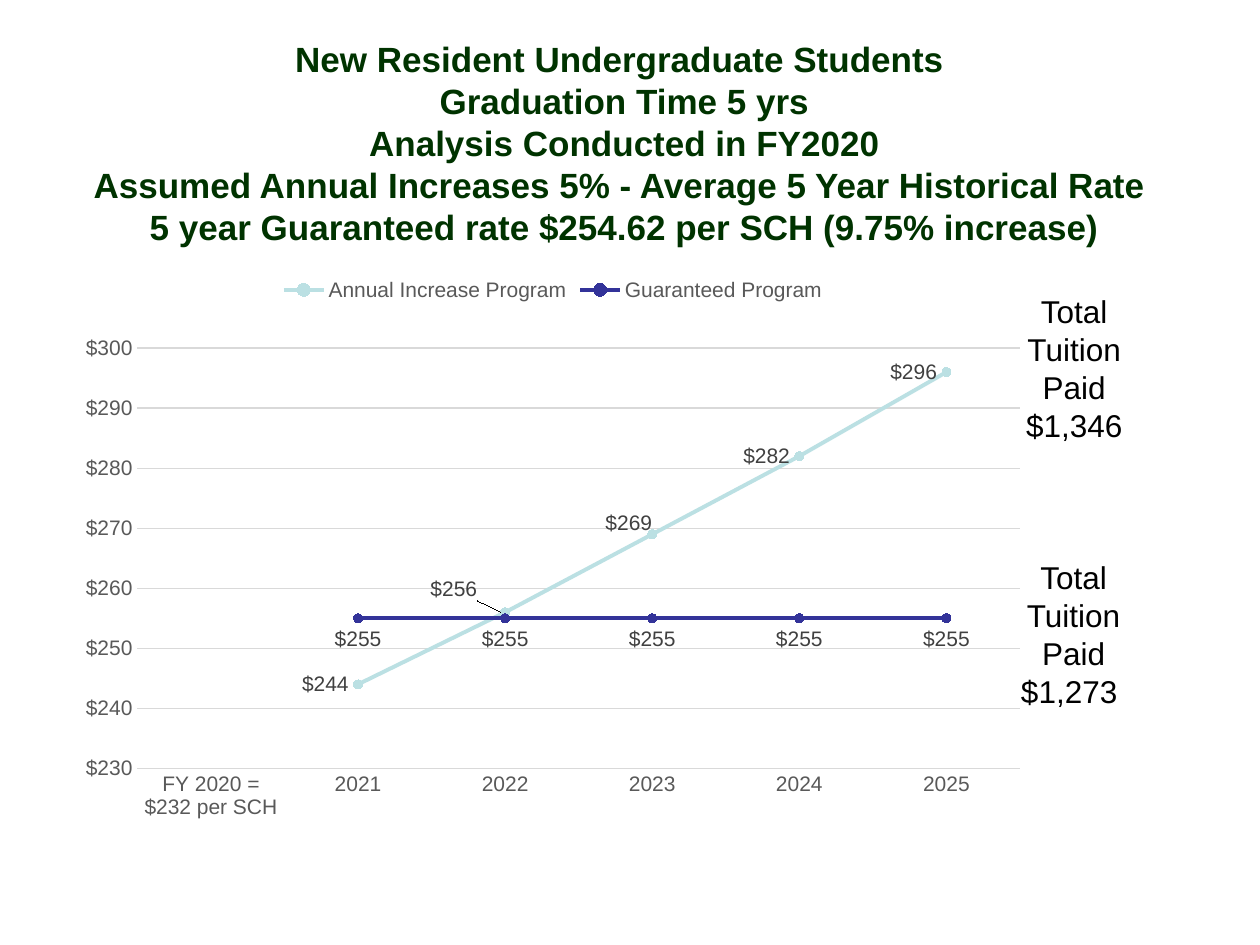
from lxml import etree
from pptx import Presentation
from pptx.chart.data import CategoryChartData
from pptx.dml.color import RGBColor
from pptx.enum.chart import (XL_CHART_TYPE, XL_LABEL_POSITION, XL_LEGEND_POSITION,
                             XL_MARKER_STYLE, XL_TICK_MARK)
from pptx.enum.text import MSO_ANCHOR, PP_ALIGN
from pptx.oxml.ns import qn
from pptx.util import Pt

LINE_CHART = XL_CHART_TYPE.LINE_MARKERS
LEFT, BELOW = XL_LABEL_POSITION.LEFT, XL_LABEL_POSITION.BELOW
LEGEND_TOP = XL_LEGEND_POSITION.TOP
CIRCLE = XL_MARKER_STYLE.CIRCLE
NO_TICK = XL_TICK_MARK.NONE
MIDDLE, TOP = MSO_ANCHOR.MIDDLE, MSO_ANCHOR.TOP
CENTER = PP_ALIGN.CENTER

FONT = "Arial"
DOLLARS = '"$"#,##0'
COLORS = {"title": "003300", "text": "000000", "axis": "595959", "label": "404040",
          "grid": "D9D9D9", "annual": "BBE0E3", "guaranteed": "333399"}

TITLE = "\v".join([
    "New Resident Undergraduate Students ",
    "Graduation Time 5 yrs",
    "Analysis Conducted in FY2020",
    "Assumed Annual Increases 5% - Average 5 Year Historical Rate ",
    "5 year Guaranteed rate $254.62 per SCH (9.75% increase)",
])
YEARS = ["FY 2020 = $232 per SCH", "2021", "2022", "2023", "2024", "2025"]
# name, values, colour, label position, moved labels {point: (dx, dy)}
SERIES = [
    ("Annual Increase Program", [None, 244, 256, 269, 282, 296], "annual", LEFT,
     {2: (-0.02, -0.04), 3: (0.01, -0.02)}),
    ("Guaranteed Program", [None] + [255] * 5, "guaranteed", BELOW, {}),
]
# total, left, top, width
TOTALS = [("$1,273 ", 563.75, 315.4, 99.4), ("$1,346", 572.4, 163.4, 82.8)]


def rgb(name):
    return RGBColor.from_string(COLORS[name])


def style_font(font, size, color, bold=False):
    font.name, font.size, font.bold = FONT, Pt(size), bold
    font.color.rgb = rgb(color)


def write_text(frame, paragraphs, size=18, color="text", bold=False, anchor=TOP):
    frame.word_wrap = True
    frame.vertical_anchor = anchor
    for index, text in enumerate(paragraphs):
        para = frame.paragraphs[0] if index == 0 else frame.add_paragraph()
        para.text = text
        para.alignment = CENTER
        for span in para.runs:
            style_font(span.font, size, color, bold)


def make_layout(**settings):
    layout = etree.Element(qn("c:layout"))
    manual = etree.SubElement(layout, qn("c:manualLayout"))
    for tag, value in settings.items():
        etree.SubElement(manual, qn("c:" + tag)).set("val", str(value))
    return layout


def style_line(line, color, width):
    line.color.rgb = rgb(color)
    line.width = Pt(width)


def style_axes(chart):
    for axis in (chart.category_axis, chart.value_axis):
        axis.major_tick_mark = axis.minor_tick_mark = NO_TICK
        style_font(axis.tick_labels.font, 12, "axis")
    style_line(chart.category_axis.format.line, "grid", 0.75)
    values = chart.value_axis
    values.minimum_scale, values.maximum_scale, values.major_unit = 230, 300, 10
    values.tick_labels.number_format = DOLLARS
    values.tick_labels.number_format_is_linked = False
    values.format.line.fill.background()
    style_line(values.major_gridlines.format.line, "grid", 0.75)


def style_series(series, color, position, moved):
    series.smooth = False
    style_line(series.format.line, color, 2.25)
    marker = series.marker
    marker.style, marker.size = CIRCLE, 5
    marker.format.fill.solid()
    marker.format.fill.fore_color.rgb = rgb(color)
    marker.format.line.color.rgb = rgb(color)

    labels = series.data_labels
    labels.show_value = True
    labels.position = position
    labels.number_format, labels.number_format_is_linked = DOLLARS, False
    style_font(labels.font, 12, "label")
    for index in moved:
        label = series.points[index].data_label
        label.position = position
        style_font(label.font, 12, "label")
    # Shift the moved labels
    for item in labels._element.findall(qn("c:dLbl")):
        number = item.find(qn("c:idx"))
        dx, dy = moved[int(number.get("val"))]
        number.addnext(make_layout(x=dx, y=dy))


def add_tuition_chart(page):
    data = CategoryChartData(number_format=DOLLARS)
    data.categories = YEARS
    for name, values, *_ in SERIES:
        data.add_series(name, values)
    chart = page.shapes.add_chart(LINE_CHART, Pt(49), Pt(151.2), Pt(534.2), Pt(326.9),
                                  data).chart
    chart.has_title = False
    style_font(chart.font, 10, "text")
    chart.has_legend = True
    chart.legend.position = LEGEND_TOP
    chart.legend.include_in_layout = False
    style_font(chart.legend.font, 12, "axis")
    style_axes(chart)
    plot = chart.plots[0]
    plot.vary_by_categories = False
    for series, (_, _, color, position, moved) in zip(plot.series, SERIES):
        style_series(series, color, position, moved)

    # Fixed plot area
    area = chart._chartSpace.find(".//" + qn("c:plotArea"))
    for old in area.findall(qn("c:layout")):
        area.remove(old)
    area.insert(0, make_layout(layoutTarget="inner", xMode="edge", yMode="edge",
                               x=0.055, y=0.146, w=0.945, h=0.735))


def add_total(page, total, left, top, width):
    box = page.shapes.add_textbox(Pt(left), Pt(top), Pt(width), Pt(94.3))
    write_text(box.text_frame, ["Total Tuition", "Paid", total])


def add_title(page):
    title = page.shapes.title
    title.left, title.top, title.width, title.height = Pt(23.8), Pt(18), Pt(666), Pt(126.7)
    write_text(title.text_frame, [TITLE], size=20, color="title", bold=True, anchor=MIDDLE)


def main():
    deck = Presentation()
    deck.slide_width, deck.slide_height = Pt(720), Pt(540)
    page = deck.slides.add_slide(deck.slide_layouts[5])
    add_title(page)
    add_tuition_chart(page)
    for total in TOTALS:
        add_total(page, *total)
    deck.save("out.pptx")


if __name__ == "__main__":
    main()
